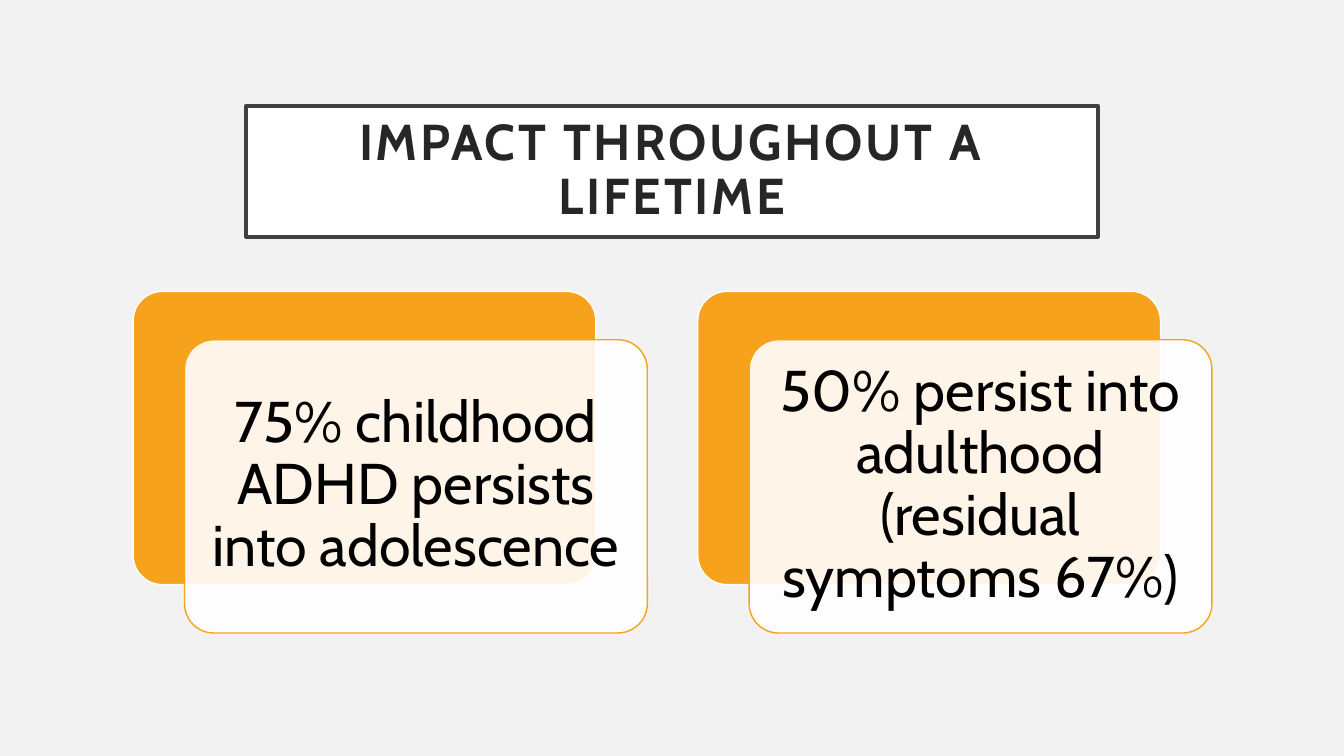
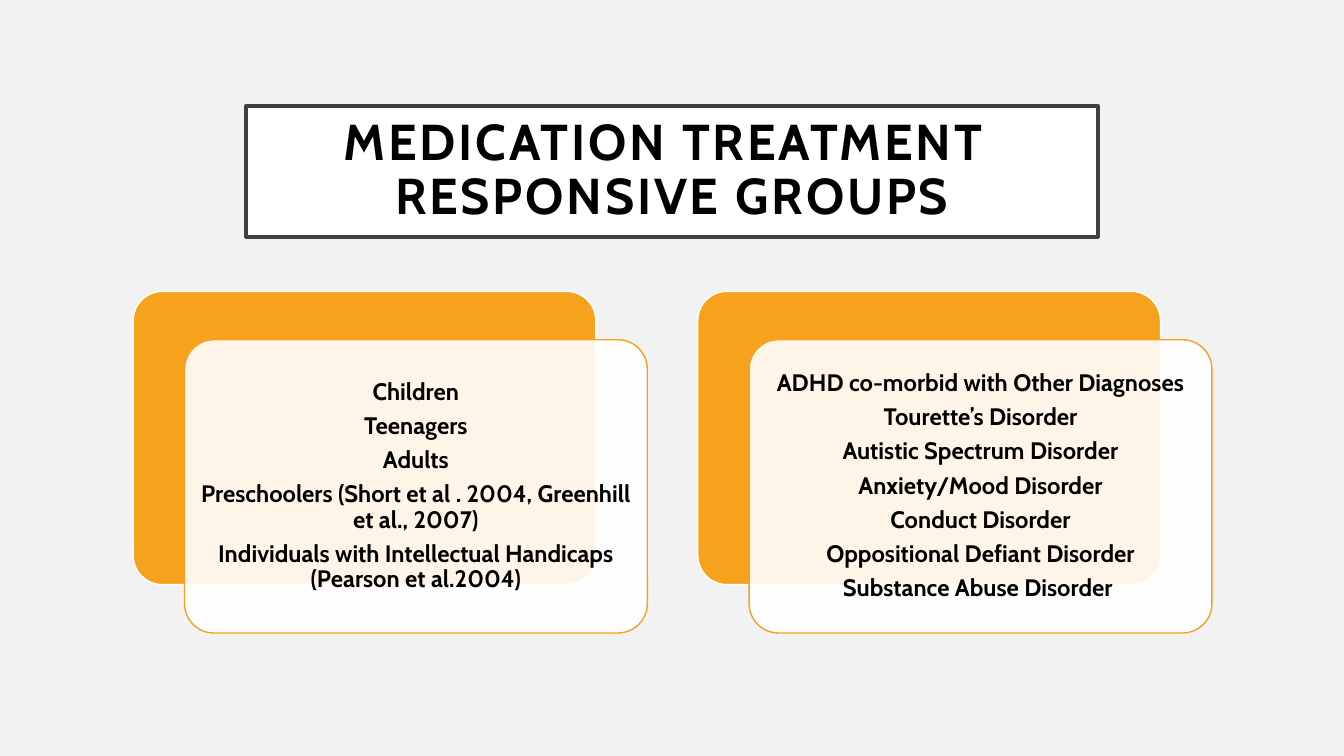
from dataclasses import dataclass

from lxml.etree import SubElement
from pptx import Presentation
from pptx.dml.color import RGBColor
from pptx.enum.shapes import MSO_SHAPE as Preset
from pptx.enum.text import MSO_ANCHOR as Anchor, MSO_AUTO_SIZE as AutoSize, PP_ALIGN as Align
from pptx.oxml.ns import qn
from pptx.presentation import Presentation as Deck
from pptx.shapes.autoshape import Shape
from pptx.slide import Slide
from pptx.text.text import TextFrame
from pptx.util import Pt

EMU_PER_PX = 9144
FONT = "Cabin"
COLORS = {
    "background": "F2F2F2",
    "white": "FFFFFF",
    "orange": "F6A21D",
    "border": "404040",
    "charcoal": "262626",
    "black": "000000",
}

SLIDE_WIDTH, SLIDE_HEIGHT = 1333, 750
CARD_LEFT, CARD_TOP, CARD_PITCH = 132, 289, 560
CARD_WIDTH, CARD_HEIGHT = 459, 291
FRONT_DX, FRONT_DY = 51, 48
CARD_ROUNDING = 0.1
FRONT_OPACITY = 90
SPACE_AFTER_RATIO = 0.35


@dataclass(frozen=True)
class Box:
    left: int
    top: int
    width: int
    height: int

    def shifted(self, dx: int, dy: int) -> "Box":
        return Box(self.left + dx, self.top + dy, self.width, self.height)


@dataclass(frozen=True)
class TextStyle:
    size: int
    color: str
    bold: bool
    inset_x: int
    inset_y: int
    space_after: float = 0


@dataclass(frozen=True)
class CardSlide:
    title: str
    title_color: str
    card_style: TextStyle
    cards: tuple[tuple[str, ...], ...]


TITLE_BOX = Box(244, 105, 845, 130)
FIRST_CARD = Box(CARD_LEFT, CARD_TOP, CARD_WIDTH, CARD_HEIGHT)
STATEMENT = TextStyle(41, "black", False, 17, 17, SPACE_AFTER_RATIO)
GROUP_LIST = TextStyle(17, "black", True, 7, 7, SPACE_AFTER_RATIO)

SLIDES = (
    CardSlide(
        "IMPACT THROUGHOUT A LIFETIME",
        "charcoal",
        STATEMENT,
        (
            ("75% childhood ADHD persists into adolescence",),
            ("50% persist into adulthood (residual symptoms 67%)",),
        ),
    ),
    CardSlide(
        "MEDICATION TREATMENT \vRESPONSIVE GROUPS",
        "black",
        GROUP_LIST,
        (
            (
                "Children",
                "Teenagers",
                "Adults",
                "Preschoolers (Short et al . 2004, Greenhill et al., 2007)",
                "Individuals with Intellectual Handicaps (Pearson et al.2004)",
            ),
            (
                "ADHD co-morbid with Other Diagnoses",
                "Tourette’s Disorder",
                "Autistic Spectrum Disorder",
                "Anxiety/Mood Disorder",
                "Conduct Disorder",
                "Oppositional Defiant Disorder",
                "Substance Abuse Disorder ",
            ),
        ),
    ),
)


def px(length: int) -> int:
    return length * EMU_PER_PX


def rgb(name: str) -> RGBColor:
    return RGBColor.from_string(COLORS[name])


def paint(shape: Shape, fill: str, line: str, line_width: float) -> None:
    shape.fill.solid()
    shape.fill.fore_color.rgb = rgb(fill)
    shape.line.color.rgb = rgb(line)
    shape.line.width = Pt(line_width)


def write(frame: TextFrame, lines: tuple[str, ...], style: TextStyle) -> None:
    frame.word_wrap = True
    frame.auto_size = AutoSize.NONE
    frame.vertical_anchor = Anchor.MIDDLE
    frame.margin_left = frame.margin_right = px(style.inset_x)
    frame.margin_top = frame.margin_bottom = px(style.inset_y)
    for index, line in enumerate(lines):
        paragraph = frame.add_paragraph() if index else frame.paragraphs[0]
        paragraph.text = line
        paragraph.alignment = Align.CENTER
        paragraph.line_spacing = 0.9
        paragraph.space_before = Pt(0)
        paragraph.space_after = Pt(style.size * style.space_after)
        paragraph.font.name = FONT
        paragraph.font.size = Pt(style.size)
        paragraph.font.bold = style.bold
        paragraph.font.color.rgb = rgb(style.color)


def add_title(slide: Slide, text: str, color: str) -> None:
    title = slide.shapes.title
    title.left, title.top = px(TITLE_BOX.left), px(TITLE_BOX.top)
    title.width, title.height = px(TITLE_BOX.width), px(TITLE_BOX.height)
    paint(title, "white", "border", 2.5)
    write(title.text_frame, (text,), TextStyle(36, color, True, 10, 5))
    for properties in title.text_frame._txBody.iter(qn("a:defRPr")):
        properties.set("spc", "200")


def add_panel(slide: Slide, box: Box, fill: str, line: str) -> Shape:
    panel = slide.shapes.add_shape(
        Preset.ROUNDED_RECTANGLE, px(box.left), px(box.top), px(box.width), px(box.height)
    )
    panel.adjustments[0] = CARD_ROUNDING
    panel.shadow.inherit = False
    paint(panel, fill, line, 1)
    return panel


def add_card(slide: Slide, box: Box, lines: tuple[str, ...], style: TextStyle) -> None:
    add_panel(slide, box, "orange", "white")
    front = add_panel(slide, box.shifted(FRONT_DX, FRONT_DY), "white", "orange")
    fill_color = front._element.spPr.find(qn("a:solidFill"))[0]
    SubElement(fill_color, qn("a:alpha")).set("val", str(FRONT_OPACITY * 1000))
    write(front.text_frame, lines, style)


def add_card_slide(deck: Deck, content: CardSlide) -> None:
    slide = deck.slides.add_slide(deck.slide_layouts[5])
    add_title(slide, content.title, content.title_color)
    for column, lines in enumerate(content.cards):
        add_card(slide, FIRST_CARD.shifted(column * CARD_PITCH, 0), lines, content.card_style)


def main() -> None:
    deck = Presentation()
    deck.slide_width, deck.slide_height = px(SLIDE_WIDTH), px(SLIDE_HEIGHT)
    backdrop = deck.slide_master.background.fill
    backdrop.solid()
    backdrop.fore_color.rgb = rgb("background")
    for content in SLIDES:
        add_card_slide(deck, content)
    deck.save("out.pptx")


if __name__ == "__main__":
    main()
